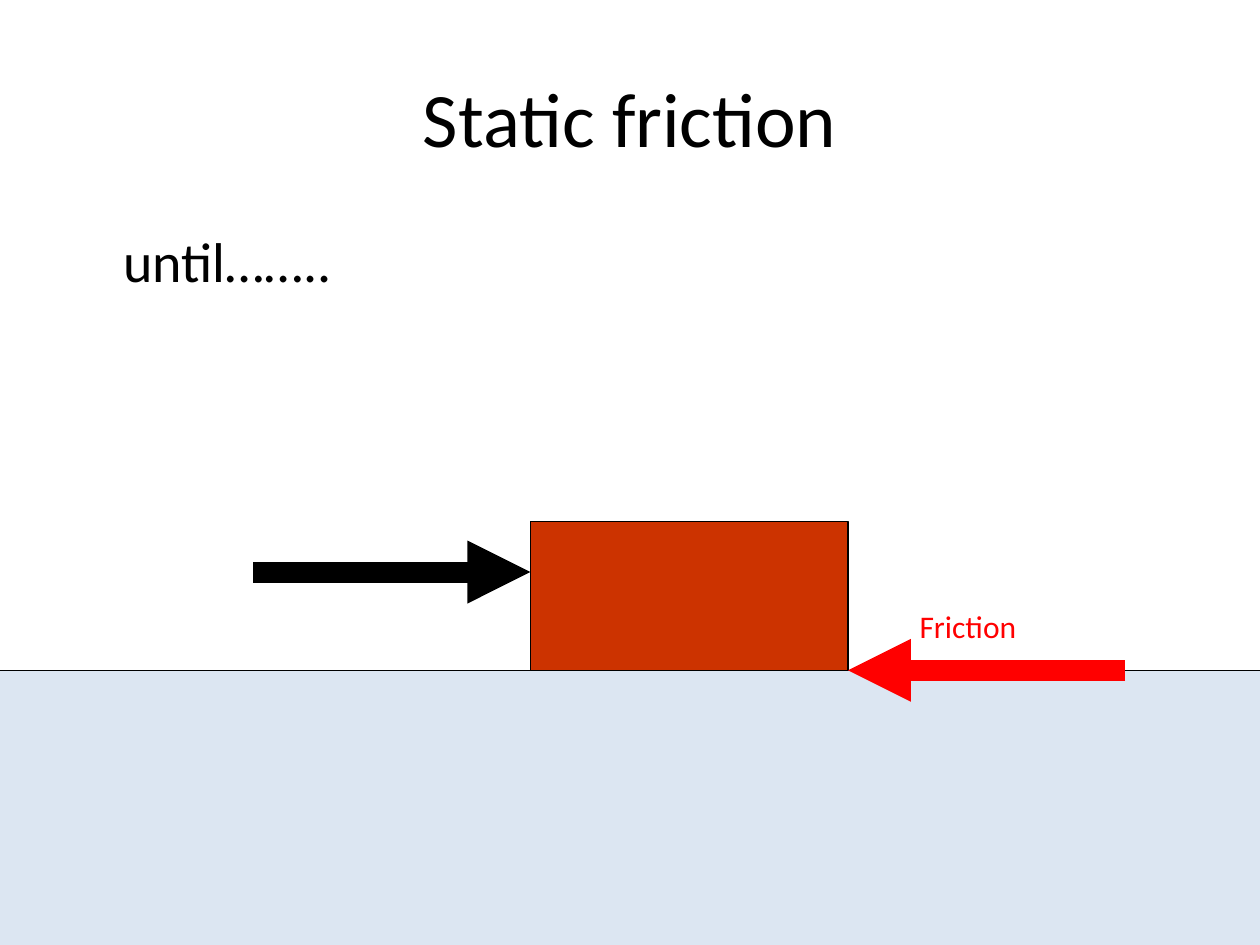
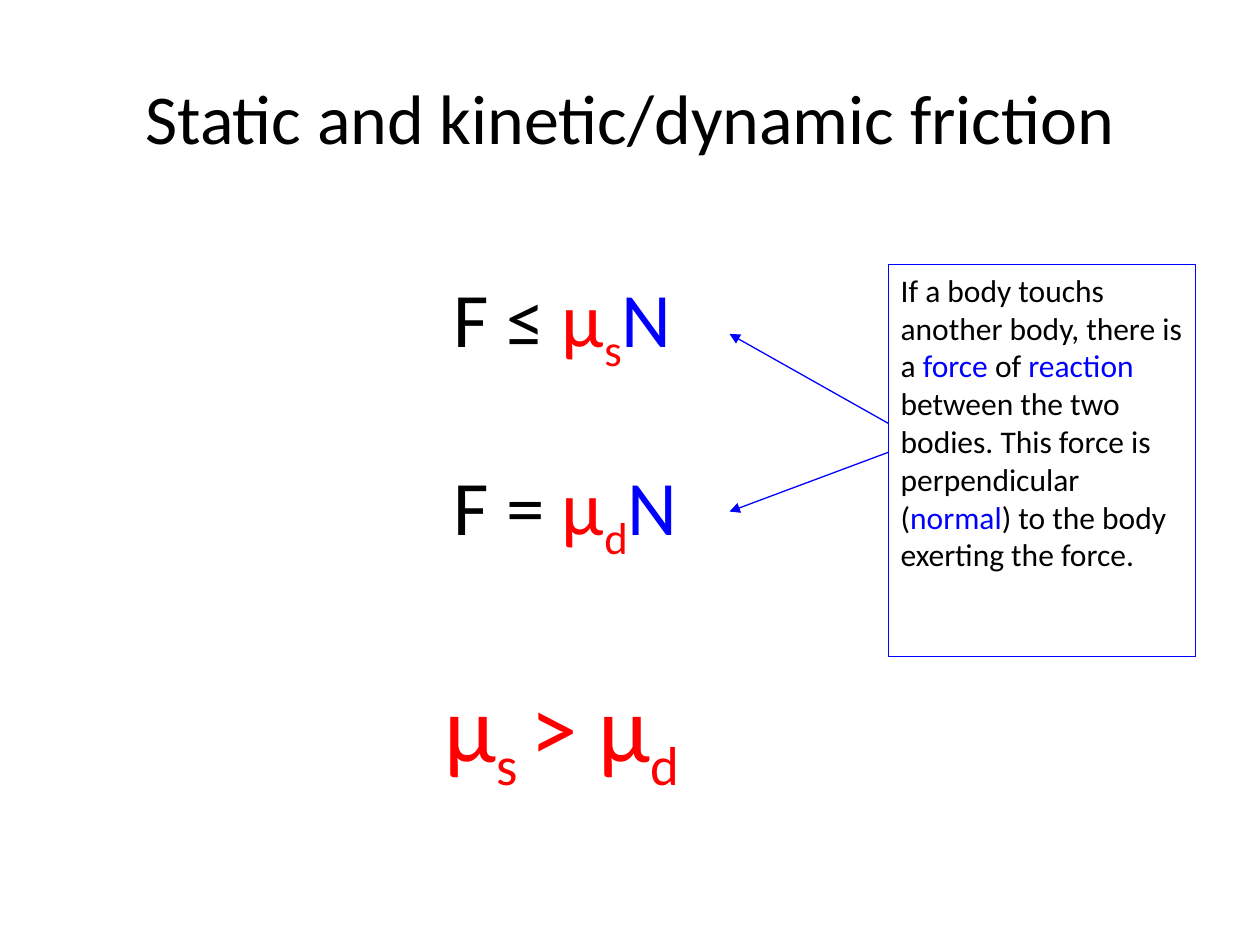
import dataclasses
import typing

import lxml.etree
import pptx
import pptx.dml.color
import pptx.enum.shapes
import pptx.enum.text
import pptx.oxml.ns
import pptx.util

ALIGN = pptx.enum.text.PP_ALIGN
ANCHOR = pptx.enum.text.MSO_ANCHOR

# Grid: 100 columns by 75 rows over the slide
SLIDE_WIDTH = pptx.util.Inches(10)
SLIDE_HEIGHT = pptx.util.Inches(7.5)
COLUMN = SLIDE_WIDTH / 100
ROW = SLIDE_HEIGHT / 75


@dataclasses.dataclass(frozen=True)
class Theme:
    font: str = "Calibri"
    ink: str = "000000"
    red: str = "FF0000"
    blue: str = "0000FF"
    block: str = "CC3300"
    ground: str = "DCE6F2"
    title: int = 44
    long_title: int = 40
    body: int = 32
    formula: int = 44
    conclusion: int = 54
    note: int = 18
    thin: float = 0.75
    force: float = 12


THEME = Theme()


class Area(typing.NamedTuple):
    column: float
    row: float
    columns: float
    rows: float

    def emu(self) -> list[int]:
        return [round(self.column * COLUMN), round(self.row * ROW),
                round(self.columns * COLUMN), round(self.rows * ROW)]


class Piece(typing.NamedTuple):
    text: str
    color: str = THEME.ink
    subscript: bool = False


@dataclasses.dataclass(frozen=True)
class Label:
    area: Area
    pieces: list[Piece]
    size: int
    align: ALIGN = ALIGN.LEFT
    anchor: ANCHOR = ANCHOR.TOP
    indent: float = 0
    border: str | None = None


@dataclasses.dataclass(frozen=True)
class Block:
    area: Area
    fill: str


@dataclasses.dataclass(frozen=True)
class Arrow:
    start: tuple[float, float]
    tip: tuple[float, float]
    color: str
    weight: float


def rgb(color: str) -> pptx.dml.color.RGBColor:
    return pptx.dml.color.RGBColor.from_string(color)


def apply(target: object, formats: dict[str, object]) -> None:
    for name, value in formats.items():
        setattr(target, name, value)


def draw_line(line, color: str, weight: float) -> None:
    line.color.rgb = rgb(color)
    line.width = pptx.util.Pt(weight)


def add_label(slide, label: Label) -> None:
    box = slide.shapes.add_textbox(*label.area.emu())
    if label.border:
        draw_line(box.line, label.border, THEME.thin)
    apply(box.text_frame, {
        "word_wrap": True,
        "vertical_anchor": label.anchor,
        "margin_left": pptx.util.Inches(0.1 + label.indent),
    })
    paragraph = box.text_frame.paragraphs[0]
    paragraph.alignment = label.align
    for piece in label.pieces:
        run = paragraph.add_run()
        run.text = piece.text
        apply(run.font, {"name": THEME.font, "size": pptx.util.Pt(label.size)})
        run.font.color.rgb = rgb(piece.color)
        if piece.subscript:
            run.font._element.set("baseline", "-25000")


def add_block(slide, block: Block) -> None:
    shape = slide.shapes.add_shape(
        pptx.enum.shapes.MSO_SHAPE.RECTANGLE, *block.area.emu())
    shape.shadow.inherit = False
    shape.fill.solid()
    shape.fill.fore_color.rgb = rgb(block.fill)
    draw_line(shape.line, THEME.ink, THEME.thin)


def add_arrow(slide, arrow: Arrow) -> None:
    ends = [round(place * unit) for point in (arrow.start, arrow.tip)
            for place, unit in zip(point, (COLUMN, ROW))]
    connector = slide.shapes.add_connector(
        pptx.enum.shapes.MSO_CONNECTOR.STRAIGHT, *ends)
    draw_line(connector.line, arrow.color, arrow.weight)
    qn = pptx.oxml.ns.qn
    properties = connector._element.spPr
    lxml.etree.SubElement(properties.find(qn("a:ln")), qn("a:tailEnd"), type="triangle")
    lxml.etree.SubElement(properties, qn("a:effectLst"))


DRAW = {Label: add_label, Block: add_block, Arrow: add_arrow}


def add_slide(deck, title: str, title_size: int,
              parts: list[Label | Block | Arrow]) -> None:
    slide = deck.slides.add_slide(deck.slide_layouts[6])
    heading = Label(Area(5, 3, 90, 12.5), [Piece(title)], title_size,
                    ALIGN.CENTER, ANCHOR.MIDDLE)
    for part in [heading, *parts]:
        DRAW[type(part)](slide, part)


def static_friction() -> list[Label | Block | Arrow]:
    surface, push_row, force_length = 53.2, 45.4, 22
    crate = Area(42.1, 41.4, 25.2, surface - 41.4)
    crate_right = crate.column + crate.columns
    return [
        Label(Area(5, 17.5, 90, 49.5), [Piece("until……..")], THEME.body, indent=0.38),
        # The ground bleeds past the slide's edges so only its top line shows
        Block(Area(-2, surface, 104, 22.8), THEME.ground),
        Block(crate, THEME.block),
        # Push and opposing friction
        Arrow((crate.column - force_length, push_row), (crate.column, push_row),
              THEME.ink, THEME.force),
        Label(Area(72, 47.7, 17.3, 4), [Piece("Friction", THEME.red)], THEME.note),
        Arrow((crate_right + force_length, surface), (crate_right, surface),
              THEME.red, THEME.force),
    ]


def friction_law(row: float, relation: str, kind: str) -> Label:
    return Label(Area(35, row, 22.4, 8.4), [
        Piece(f"F {relation} "), Piece("μ", THEME.red),
        Piece(kind, THEME.red, True), Piece("N", THEME.blue),
    ], THEME.formula)


def friction_laws() -> list[Label | Block | Arrow]:
    note = Area(70.5, 21, 24.4, 31.1)
    arrow_tip = 57.9
    return [
        # Formulas
        friction_law(21, "≤", "s"),
        friction_law(35.9, "=", "d"),
        Label(Area(34.3, 52.5, 37.8, 10), [
            Piece("μ", THEME.red), Piece("s ", THEME.red, True),
            Piece("> μ", THEME.red), Piece("d", THEME.red, True),
        ], THEME.conclusion),
        # Note on the normal force, pointing at both laws
        Label(note, [
            Piece("If a body touchs another body, there is a "),
            Piece("force", THEME.blue), Piece(" of "), Piece("reaction", THEME.blue),
            Piece(" between the two bodies. This force is perpendicular ("),
            Piece("normal", THEME.blue), Piece(") to the body exerting the force."),
        ], THEME.note, border=THEME.blue),
        *(Arrow((note.column, start), (arrow_tip, tip), THEME.blue, THEME.thin)
          for start, tip in ((33.6, 26.5), (35.9, 40.6))),
    ]


def main() -> None:
    deck = pptx.Presentation()
    apply(deck, {"slide_width": SLIDE_WIDTH, "slide_height": SLIDE_HEIGHT})
    add_slide(deck, "Static friction", THEME.title, static_friction())
    add_slide(deck, "Static and kinetic/dynamic friction", THEME.long_title,
              friction_laws())
    deck.save("out.pptx")


if __name__ == "__main__":
    main()
